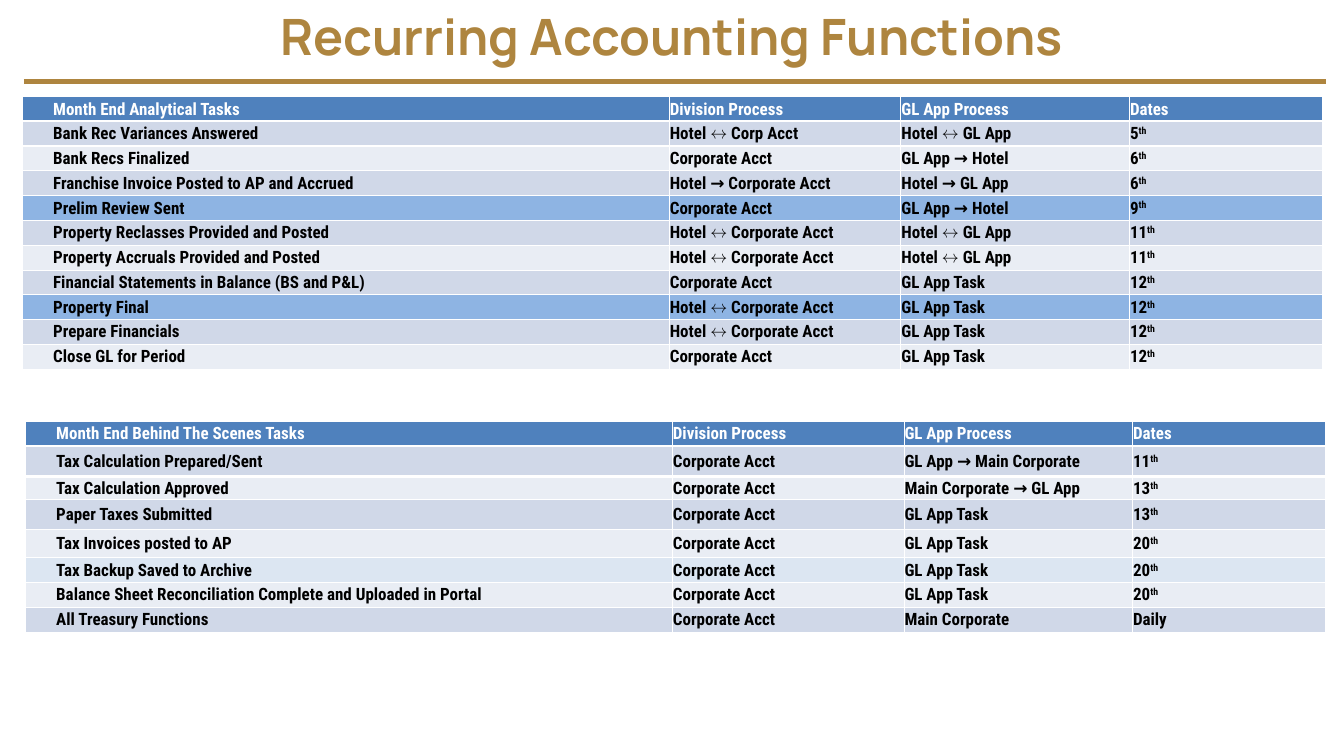
"""Build the slide of recurring accounting functions."""
from lxml.etree import SubElement
from pptx import Presentation
from pptx.dml.color import RGBColor
from pptx.enum.shapes import MSO_CONNECTOR as CONNECTOR
from pptx.enum.text import MSO_ANCHOR as ANCHOR, MSO_AUTO_SIZE as AUTO_SIZE, PP_ALIGN as ALIGN
from pptx.oxml.ns import qn
from pptx.util import Inches, Pt

WIDTH, HEIGHT = 21.99, 12.37
GOLD, WHITE, BLACK = "AE853F", "FFFFFF", "000000"
HEADER, ODD, EVEN = "4F81BD", "D0D8E8", "E9EDF4"
MILESTONE, PALE = "8EB4E3", "DCE6F2"
COLUMNS = [10.59, 3.79, 3.74, 3.15]
ROW = 4.46 / 11

HEADINGS = ["Division Process", "GL App Process", "Dates"]
ANALYTICAL = [
    ["Month End Analytical Tasks", *HEADINGS],
    ["Bank Rec Variances Answered", "Hotel ↔ Corp Acct", "Hotel ↔ GL App", "5th"],
    ["Bank Recs Finalized", "Corporate Acct", "GL App → Hotel", "6th"],
    ["Franchise Invoice Posted to AP and Accrued", "Hotel → Corporate Acct", "Hotel → GL App", "6th"],
    ["Prelim Review Sent", "Corporate Acct", "GL App → Hotel", "9th"],
    ["Property Reclasses Provided and Posted", "Hotel ↔ Corporate Acct", "Hotel ↔ GL App", "11th"],
    ["Property Accruals Provided and Posted", "Hotel ↔ Corporate Acct", "Hotel ↔ GL App", "11th"],
    ["Financial Statements in Balance (BS and P&L)", "Corporate Acct", "GL App Task", "12th"],
    ["Property Final", "Hotel ↔ Corporate Acct", "GL App Task", "12th"],
    ["Prepare Financials", "Hotel ↔ Corporate Acct", "GL App Task", "12th"],
    ["Close GL for Period", "Corporate Acct", "GL App Task", "12th"],
]
BEHIND_SCENES = [
    ["Month End Behind The Scenes Tasks", *HEADINGS],
    ["Tax Calculation Prepared/Sent", "Corporate Acct", "GL App → Main Corporate", "11th"],
    ["Tax Calculation Approved", "Corporate Acct", "Main Corporate → GL App", "13th"],
    ["Paper Taxes Submitted", "Corporate Acct", "GL App Task", "13th"],
    ["Tax Invoices posted to AP", "Corporate Acct", "GL App Task", "20th"],
    ["Tax Backup Saved to Archive", "Corporate Acct", "GL App Task", "20th"],
    ["Balance Sheet Reconciliation Complete and Uploaded in Portal", "Corporate Acct", "GL App Task", "20th"],
    ["All Treasury Functions", "Corporate Acct", "Main Corporate", "Daily"],
]


def rgb(value):
    return RGBColor.from_string(value)


class Deck:
    def __init__(self, prs):
        self.s = prs.slides.add_slide(prs.slide_layouts[5])
        self.title_font, self.body_font = "Manrope", "Roboto Condensed"

    def style(self, p, name, size, color):
        p.font.name, p.font.size, p.font.bold = name, Pt(size), True
        p.font.color.rgb = rgb(color)

    def title(self, text, left, top, width, height):
        sp = self.s.shapes.title
        sp.left, sp.top, sp.width, sp.height = map(Inches, (left, top, width, height))
        tf = sp.text_frame
        tf.text = text
        tf.auto_size, tf.vertical_anchor = AUTO_SIZE.NONE, ANCHOR.MIDDLE
        tf.margin_left = tf.margin_right = tf.margin_top = tf.margin_bottom = 0
        p = tf.paragraphs[0]
        p.alignment = ALIGN.CENTER
        self.style(p, self.title_font, 59, GOLD)

    def rule(self, left, right, y):
        line = self.s.shapes.add_connector(
            CONNECTOR.STRAIGHT, Inches(left), Inches(y), Inches(right), Inches(y))
        line.line.color.rgb, line.line.width = rgb(GOLD), Pt(6)
        SubElement(line._element.spPr, qn("a:effectLst"))

    def table(self, rows, left, top, heights, highlights):
        table = self.s.shapes.add_table(
            len(rows), len(COLUMNS), Inches(left), Inches(top),
            Inches(sum(COLUMNS)), Inches(sum(heights))).table
        for column, width in zip(table.columns, COLUMNS):
            column.width = Inches(width)
        for i, (texts, height) in enumerate(zip(rows, heights)):
            table.rows[i].height = Inches(height)
            band = HEADER if i == 0 else ODD if i % 2 else EVEN
            for j, text in enumerate(texts):
                color = WHITE if i == 0 else BLACK
                self.cell(table.cell(i, j), text, highlights.get(i, band), color, j == 0)
                if i == 0:
                    self.underline(table.cell(i, j), "a:lnB")
                elif i == 1:
                    self.underline(table.cell(i, j), "a:lnT")

    def underline(self, cell, side):
        props = cell._tc.get_or_add_tcPr()
        border = SubElement(props, qn(side), w=str(Pt(3)))
        fill = SubElement(border, qn("a:solidFill"))
        SubElement(fill, qn("a:srgbClr"), val=WHITE)
        props.insert(0, border)

    def cell(self, cell, text, fill, color, indented):
        cell.fill.solid()
        cell.fill.fore_color.rgb = rgb(fill)
        cell.vertical_anchor = ANCHOR.MIDDLE
        cell.margin_left = cell.margin_right = cell.margin_top = Inches(0.01)
        cell.margin_bottom = 0
        p = cell.text_frame.paragraphs[0]
        self.style(p, self.body_font, 20, color)
        if indented:
            p.level = 1
            p._p.get_or_add_pPr().set("marL", str(Inches(0.5)))
        ordinal = text[0].isdigit()
        p.add_run().text = text.removesuffix("th") if ordinal else text
        if ordinal:
            r = p.add_run()
            r.text = "th"
            r.font._element.set("baseline", "30000")


def main():
    prs = Presentation()
    prs.slide_width, prs.slide_height = Inches(WIDTH), Inches(HEIGHT)
    deck = Deck(prs)
    deck.title("Recurring Accounting Functions", 0, 0.07, WIDTH, 1.02)
    deck.rule(0.39, 21.7, 1.33)
    deck.table(ANALYTICAL, 0.36, 1.58, [ROW] * 11, {4: MILESTONE, 8: MILESTONE})
    deck.table(BEHIND_SCENES, 0.41, 6.89,
               [ROW, 0.5, 0.38, 0.48, 0.47, ROW, ROW, ROW], {5: PALE})
    prs.save("out.pptx")


if __name__ == "__main__":
    main()
